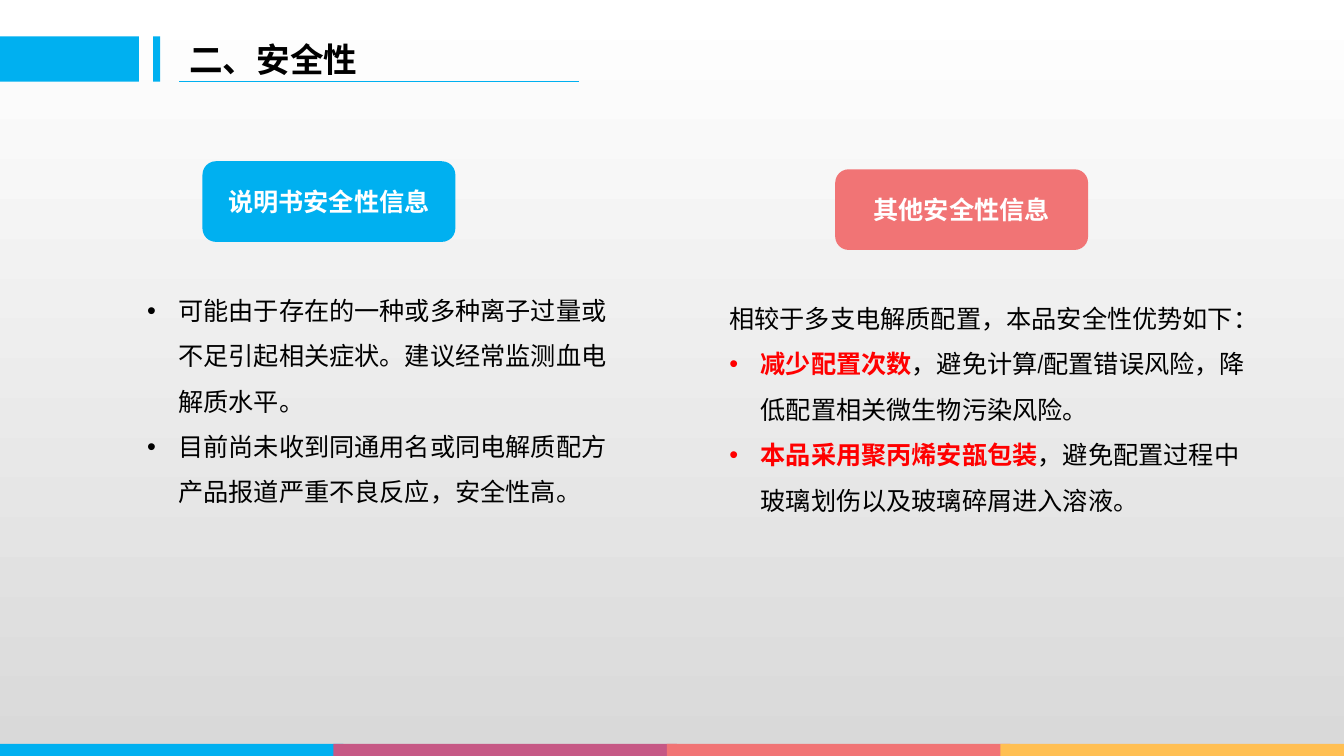
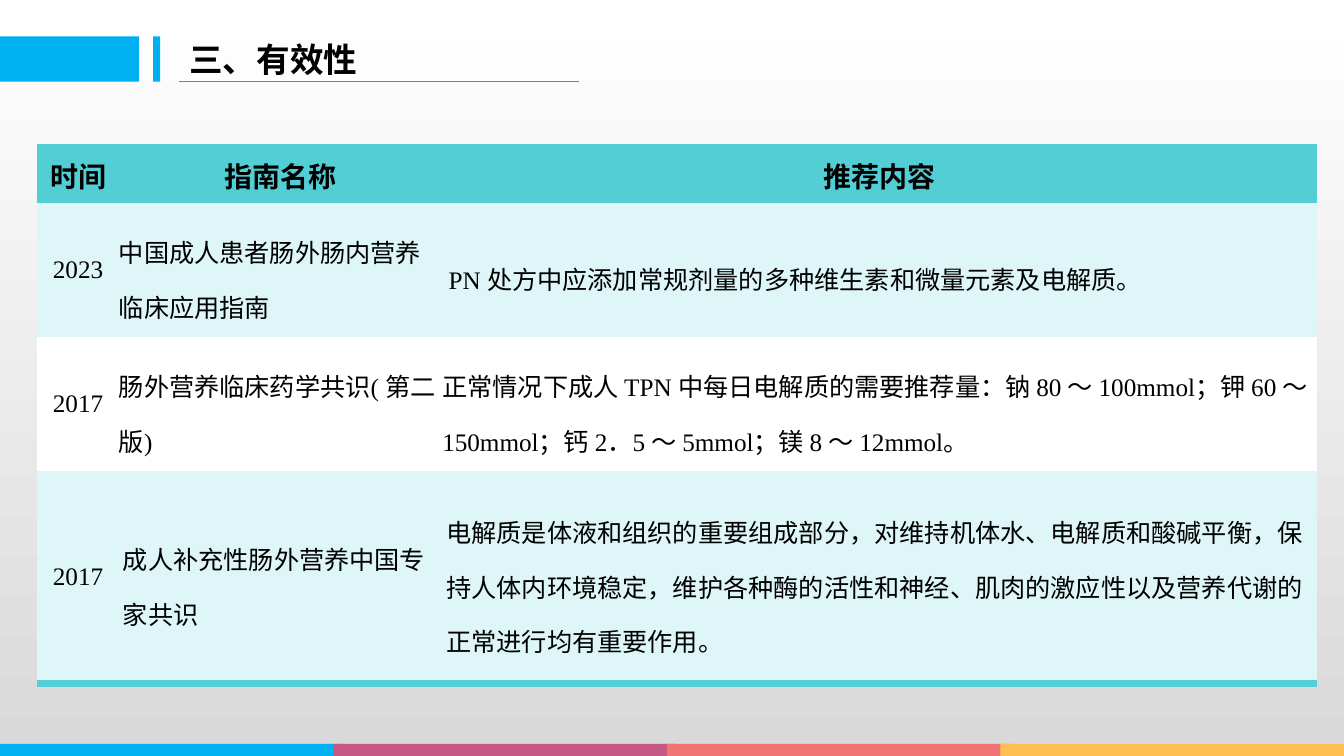
from lxml import etree
from pptx import Presentation
from pptx.dml.color import RGBColor
from pptx.enum.lang import MSO_LANGUAGE_ID as Language
from pptx.enum.shapes import MSO_CONNECTOR as Connector, MSO_SHAPE as Preset
from pptx.enum.text import MSO_ANCHOR as Anchor, MSO_AUTO_SIZE as AutoSize, PP_ALIGN as Align
from pptx.oxml.ns import qn
from pptx.util import Inches, Pt

SLIDE_WIDTH, SLIDE_HEIGHT = 13.34, 7.5
BLUE, PLUM, CORAL, AMBER = "00B0F0", "C65885", "F17475", "FFBF53"
TEAL, PALE_TEAL = "53CED5", "DEF6F7"
BLACK, WHITE, RED, GREY = "000000", "FFFFFF", "FF0000", "D9D9D9"
SANS, NARROW, SERIF = "Noto Sans CJK SC", "Arial Narrow", "Times New Roman"
TWO_CONTENT, TITLE_ONLY = 3, 5
NO_STYLE_NO_GRID = "{2D5ABB26-0587-4C30-8999-92F81FD0307C}"

LABEL_ITEMS = [
    [("可能由于存在的一种或多种离子过量或不足引起相关症状。建议经常监测血电解质水平。", {})],
    [("目前尚未收到同通用名或同电解质配方产品报道严重不良反应，安全性高。", {})],
]
EMPHASIS = {"color": RED, "bold": True}
OTHER_INTRO = "相较于多支电解质配置，本品安全性优势如下："
OTHER_ITEMS = [
    [("减少配置次数", EMPHASIS), ("，避免计算/配置错误风险，降低配置相关微生物污染风险。", {})],
    [("本品采用聚丙烯安瓿包装", EMPHASIS), ("，避免配置过程中玻璃划伤以及玻璃碎屑进入溶液。", {})],
]
GUIDELINES = [
    ("时间", "指南名称", "推荐内容"),
    ("2023", "中国成人患者肠外肠内营养临床应用指南",
     " PN 处方中应添加常规剂量的多种维生素和微量元素及电解质。"),
    ("2017", "肠外营养临床药学共识( 第二版)",
     "正常情况下成人 TPN 中每日电解质的需要推荐量：钠 80 ～ 100mmol；钾 60 ～ 150mmol；"
     "钙 2．5 ～ 5mmol；镁 8 ～ 12mmol。"),
    ("2017", "成人补充性肠外营养中国专家共识",
     "电解质是体液和组织的重要组成部分，对维持机体水、电解质和酸碱平衡，保持人体内环境稳定，"
     "维护各种酶的活性和神经、肌肉的激应性以及营养代谢的正常进行均有重要作用。"),
]


def rgb(value):
    return RGBColor.from_string(value)


def write(para, text, font=SANS, asian=None, size=18, color=BLACK, bold=False):
    """Add a run; the East Asian font follows the Latin one unless given."""
    span = para.add_run()
    span.text = text
    span.font.name = font
    span.font.size = Pt(size)
    span.font.bold = bold
    span.font.color.rgb = rgb(color)
    span.font.language_id = Language.SIMPLIFIED_CHINESE
    east_asian = etree.SubElement(span.font._element, qn("a:ea"))
    east_asian.set("typeface", asian or font)


def place(shape, left, top, width, height):
    shape.left, shape.top = Inches(left), Inches(top)
    shape.width, shape.height = Inches(width), Inches(height)


def add_block(slide, left, top, width, height, color, preset=Preset.RECTANGLE):
    block = slide.shapes.add_shape(
        preset, Inches(left), Inches(top), Inches(width), Inches(height))
    block.shadow.inherit = False
    block.fill.solid()
    block.fill.fore_color.rgb = rgb(color)
    block.line.fill.background()
    return block


def add_rule(slide, left, right, top, color):
    rule = slide.shapes.add_connector(
        Connector.STRAIGHT, Inches(left), Inches(top), Inches(right), Inches(top))
    rule.line.color.rgb = rgb(color)
    rule.line.width = Pt(0.75)
    etree.SubElement(rule.element.spPr, qn("a:effectLst"))
    return rule


def dress_master(master, slide):
    """Draw the shared bands on a slide and hand them to the master."""
    fill = master.background.fill
    fill.gradient()
    fill.gradient_angle = 270
    for stop, color in zip(fill.gradient_stops, (WHITE, GREY)):
        stop.color.rgb = rgb(color)

    bands = [
        add_block(slide, 1.52, 0.36, 0.07, 0.45, BLUE),
        add_block(slide, 0, 0.36, 1.38, 0.45, BLUE),
        add_rule(slide, 1.78, 5.75, 0.81, BLUE),
    ]
    colors = (BLUE, PLUM, CORAL, AMBER)
    width, height = 3.41, 0.12
    step = (SLIDE_WIDTH - width) / (len(colors) - 1)
    bands += [add_block(slide, index * step, SLIDE_HEIGHT - height, width, height, color)
              for index, color in enumerate(colors)]
    for number, band in enumerate(bands, start=100):
        band.element.xpath(".//p:cNvPr")[0].set("id", str(number))
        master.shapes.element.append(band.element)


def add_slide(deck, layout, heading):
    slide = deck.slides.add_slide(deck.slide_layouts[layout])
    title = slide.shapes.title
    place(title, 1.78, 0.36, 3.97, 0.45)
    frame = title.text_frame
    frame.auto_size = AutoSize.NONE
    frame.vertical_anchor = Anchor.MIDDLE
    para = frame.paragraphs[0]
    para.alignment = Align.LEFT
    write(para, heading, size=24, bold=True)
    return slide


def add_label(slide, left, top, text, color):
    label = add_block(slide, left, top, 2.51, 0.8, color, Preset.ROUNDED_RECTANGLE)
    label.text_frame.vertical_anchor = Anchor.MIDDLE
    para = label.text_frame.paragraphs[0]
    para.alignment = Align.CENTER
    write(para, text, color=WHITE, bold=True)


def set_bullet(para, bulleted):
    indent = Inches(0.31) if bulleted else 0
    properties = para._p.get_or_add_pPr()
    properties.set("marL", str(indent))
    properties.set("indent", str(-indent))
    if bulleted:
        etree.SubElement(properties, qn("a:buChar")).set("char", "•")
    else:
        etree.SubElement(properties, qn("a:buNone"))


def fill_body(body, items, intro=None):
    frame = body.text_frame
    frame.auto_size = AutoSize.NONE
    frame.vertical_anchor = Anchor.TOP
    lines = [(item, True) for item in items]
    if intro:
        lines.insert(0, ([(intro, {})], False))
    for index, (spans, bulleted) in enumerate(lines):
        para = frame.add_paragraph() if index else frame.paragraphs[0]
        para.line_spacing = 1.5
        para.space_before = Pt(0)
        set_bullet(para, bulleted)
        for text, style in spans:
            write(para, text, font=NARROW, **style)


def set_border(cell, side, color, points):
    line = etree.Element(qn(f"a:{side}"), w=str(Pt(points)))
    fill = etree.SubElement(line, qn("a:solidFill"))
    etree.SubElement(fill, qn("a:srgbClr")).set("val", color)
    cell._tc.get_or_add_tcPr().insert(0, line)


def fill_cell(cell, text, color, header, centered, margin):
    cell.fill.solid()
    cell.fill.fore_color.rgb = rgb(color)
    cell.vertical_anchor = Anchor.MIDDLE
    cell.margin_left = cell.margin_right = Inches(margin)
    cell.margin_top = cell.margin_bottom = Inches(margin)
    para = cell.text_frame.paragraphs[0]
    para.alignment = Align.CENTER if centered else Align.LEFT
    if not centered:
        para.line_spacing = 1.5
    write(para, text, font=SERIF, asian=SANS, size=20 if header else 18, bold=header)


def add_guideline_table(slide):
    widths, heights = (0.81, 3.21, 8.68), (0.54, 1.33, 1.33, 2.11)
    frame = slide.shapes.add_table(
        len(heights), len(widths), Inches(0.37), Inches(1.47),
        Inches(sum(widths)), Inches(sum(heights)))
    table = frame.table
    table.first_row = table.horz_banding = False
    table._tbl.tblPr.find(qn("a:tableStyleId")).text = NO_STYLE_NO_GRID
    for column, width in zip(table.columns, widths):
        column.width = Inches(width)
    for row, height in zip(table.rows, heights):
        row.height = Inches(height)

    last = len(GUIDELINES) - 1
    for row, texts in enumerate(GUIDELINES):
        header = row == 0
        color = TEAL if header else PALE_TEAL if row % 2 else WHITE
        for column, text in enumerate(texts):
            cell = table.cell(row, column)
            fill_cell(cell, text, color, header, centered=header or column == 0,
                      margin=0.04 if row == last else 0)
            if header:
                set_border(cell, "lnT", TEAL, 6)
            elif row == last:
                set_border(cell, "lnB", TEAL, 6)


def main():
    deck = Presentation()
    deck.slide_width, deck.slide_height = Inches(SLIDE_WIDTH), Inches(SLIDE_HEIGHT)

    safety = add_slide(deck, TWO_CONTENT, "二、安全性")
    dress_master(deck.slide_master, safety)
    add_label(safety, 2.01, 1.6, "说明书安全性信息", BLUE)
    add_label(safety, 8.29, 1.68, "其他安全性信息", CORAL)
    label_body, other_body = safety.placeholders[1], safety.placeholders[2]
    place(label_body, 1.36, 2.73, 4.98, 2.37)
    fill_body(label_body, LABEL_ITEMS)
    place(other_body, 7.14, 2.81, 5.42, 2.37)
    fill_body(other_body, OTHER_ITEMS, intro=OTHER_INTRO)

    efficacy = add_slide(deck, TITLE_ONLY, "三、有效性")
    add_guideline_table(efficacy)

    deck.save("out.pptx")


if __name__ == "__main__":
    main()
